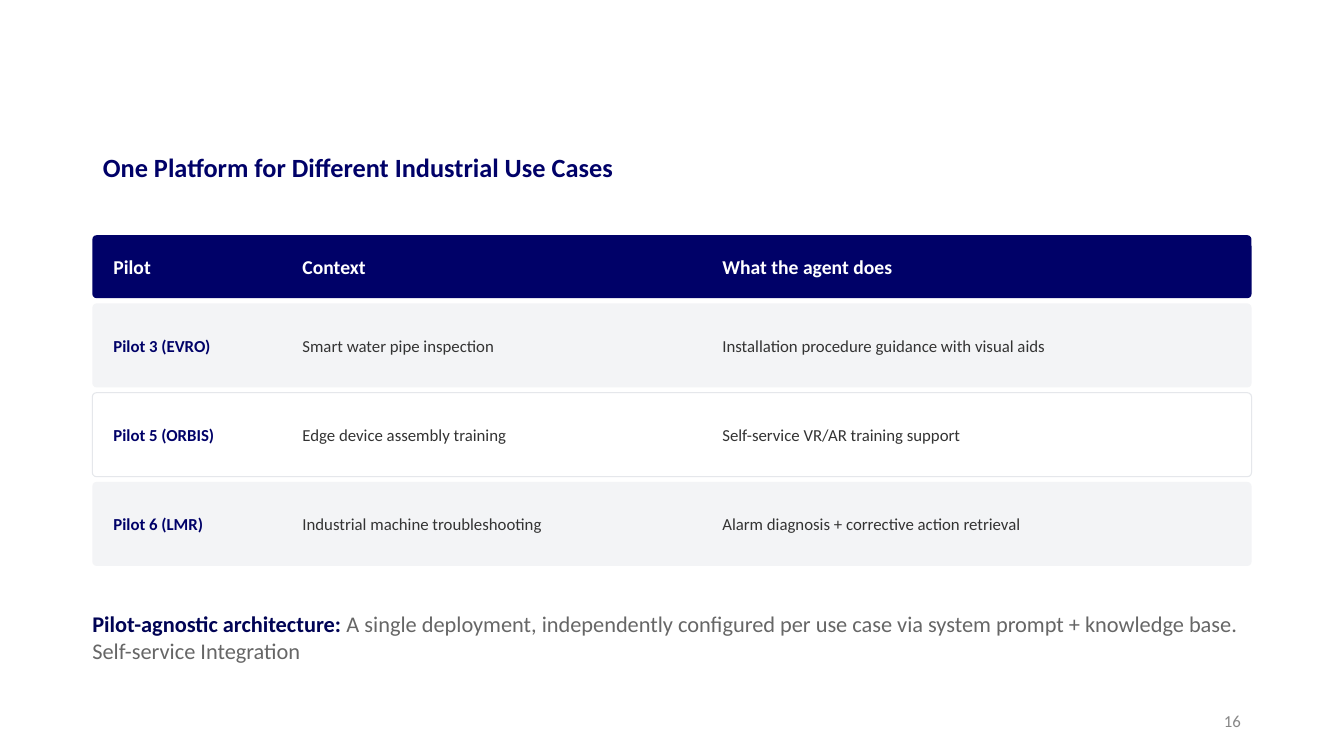
"""Build the slide that compares the industrial pilots on one platform."""
from pptx import Presentation
from pptx.dml.color import RGBColor
from pptx.enum import shapes, text
from pptx.util import Pt

PX = 9525
NAVY = RGBColor(0x00, 0x01, 0x68)
DEEP = RGBColor(0x00, 0x03, 0x54)
INK = RGBColor(0x33, 0x33, 0x33)
GREY = RGBColor(0x66, 0x66, 0x66)
PALE = RGBColor(0x88, 0x88, 0x88)
BAND = RGBColor(0xF3, 0xF4, 0xF6)
RULE = RGBColor(0xE5, 0xE7, 0xEB)
WHITE = RGBColor(0xFF, 0xFF, 0xFF)

TITLE = "One Platform for Different Industrial Use Cases"
ROWS = [
    ("Pilot", "Context", "What the agent does"),
    ("Pilot 3 (EVRO)", "Smart water pipe inspection",
     "Installation procedure guidance with visual aids"),
    ("Pilot 5 (ORBIS)", "Edge device assembly training",
     "Self-service VR/AR training support"),
    ("Pilot 6 (LMR)", "Industrial machine troubleshooting",
     "Alarm diagnosis + corrective action retrieval"),
]
NOTE_LEAD = "Pilot-agnostic architecture:"
NOTE_BODY = (" A single deployment, independently configured per use case via "
             "system prompt + knowledge base. Self-service Integration")
NUMBER = "16"

LEFT, TOP, GAP, PAD = 88, 224, 5, 20
COLUMNS = (180, 400, 524)
HEAD_H, ROW_H, RADIUS = 60, 80, 4
WIDTH = sum(COLUMNS)


def box(*lengths):
    return [n * PX for n in lengths]


def add_run(p, words, size, color, bold=False):
    r = p.add_run()
    r.text = words
    for name, value in dict(name="Calibri", size=Pt(size), bold=bold).items():
        setattr(r.font, name, value)
    r.font.color.rgb = color


def setup(sp, insets, anchor=text.MSO_ANCHOR.MIDDLE):
    tf = sp.text_frame
    left, top, right, bottom = box(*insets)
    values = dict(margin_left=left, margin_top=top, margin_right=right,
                  margin_bottom=bottom, word_wrap=True, vertical_anchor=anchor,
                  auto_size=text.MSO_AUTO_SIZE.NONE)
    for name, value in values.items():
        setattr(tf, name, value)
    return tf.paragraphs[0]


def add_bar(parent, y, height, fill, line):
    sp = parent.add_shape(shapes.MSO_SHAPE.ROUNDED_RECTANGLE,
                          *box(LEFT, y, WIDTH, height))
    sp.adjustments[0] = round(RADIUS / height, 3)
    sp.shadow.inherit = False
    sp.fill.solid()
    sp.fill.fore_color.rgb = fill
    if line is None:
        sp.line.fill.background()
    else:
        sp.line.color.rgb = line
        sp.line.width = Pt(0.75)


def add_table_rows(s):
    y = TOP
    for i, row in enumerate(ROWS):
        head = i == 0
        height = HEAD_H if head else ROW_H
        fill = NAVY if head else BAND if i % 2 else WHITE
        group = s.shapes.add_group_shape().shapes
        add_bar(group, y, height, fill, RULE if fill == WHITE else None)
        x = LEFT
        for j, (words, width) in enumerate(zip(row, COLUMNS)):
            p = setup(group.add_textbox(*box(x, y, width, height)), (PAD, 0, 0, 0))
            color = WHITE if head else INK if j else NAVY
            add_run(p, words, 14 if head else 12, color, head or j == 0)
            x += width
        y += height + GAP


def main():
    prs = Presentation()
    prs.slide_width, prs.slide_height = box(1280, 720)
    s = prs.slides.add_slide(prs.slide_layouts[5])

    title = s.shapes.title
    title.left, title.top, title.width, title.height = box(LEFT, 130, 1177, 49)
    p = setup(title, (10, 5, 10, 5), text.MSO_ANCHOR.BOTTOM)
    p.alignment = text.PP_ALIGN.LEFT
    add_run(p, TITLE, 18.8, NAVY, True)

    p = setup(s.shapes.add_textbox(*box(904, 667, 288, 38)), (10, 5, 10, 5))
    p.alignment = text.PP_ALIGN.RIGHT
    add_run(p, NUMBER, 12, PALE)

    add_table_rows(s)

    p = setup(s.shapes.add_textbox(*box(LEFT, 547, WIDTH, 120)), (0, 0, 0, 0))
    p.space_after = Pt(6)
    add_run(p, NOTE_LEAD, 16, DEEP, True)
    add_run(p, NOTE_BODY, 16, GREY)

    prs.save("out.pptx")


if __name__ == "__main__":
    main()
